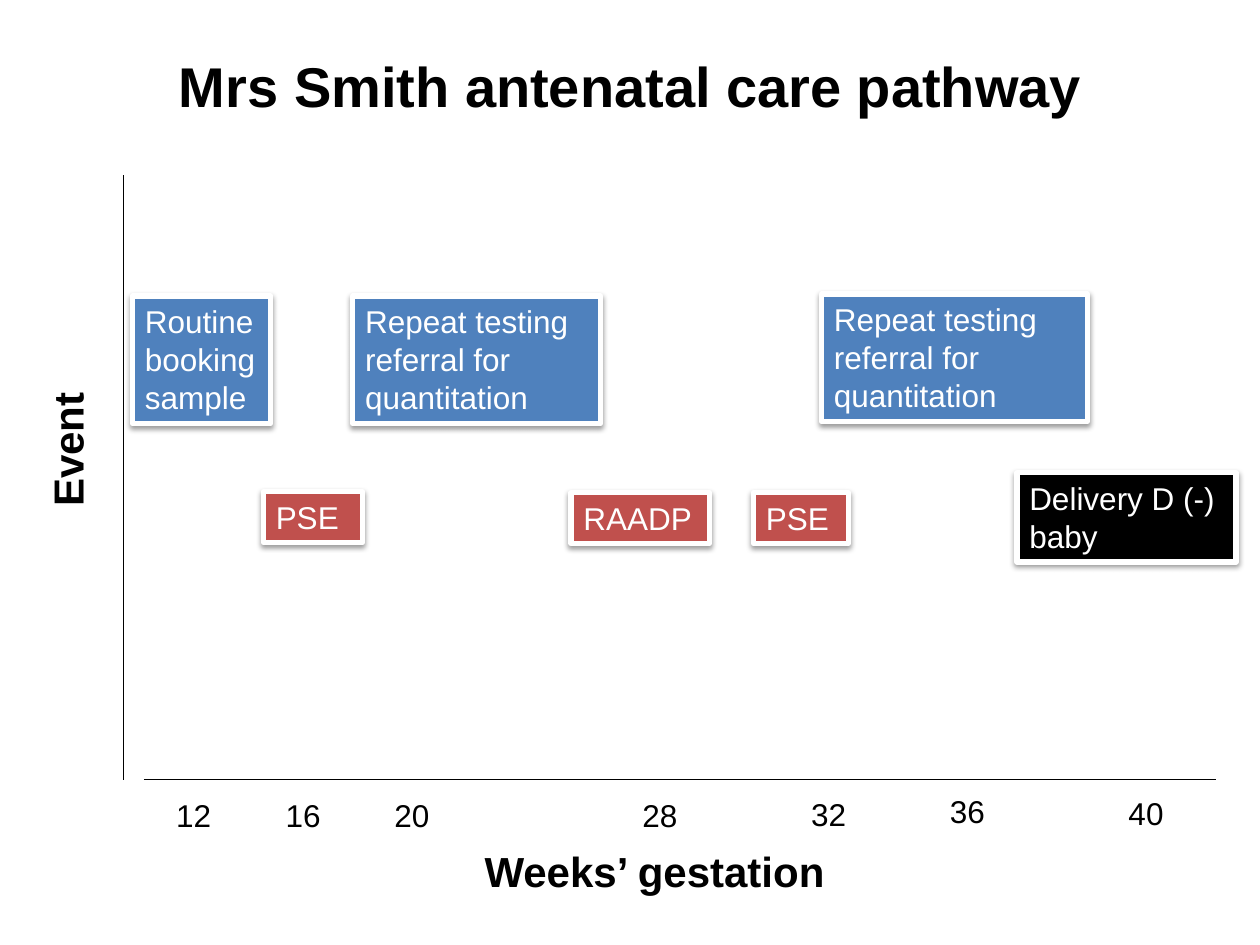
from lxml import etree
from pptx import Presentation
from pptx.dml.color import RGBColor
from pptx.enum.shapes import MSO_CONNECTOR, MSO_SHAPE
from pptx.enum.text import MSO_ANCHOR, MSO_AUTO_SIZE, PP_ALIGN
from pptx.oxml.ns import qn
from pptx.util import Cm, Pt

STRAIGHT = MSO_CONNECTOR.STRAIGHT
RECTANGLE = MSO_SHAPE.RECTANGLE
TOP = MSO_ANCHOR.TOP
GROW = MSO_AUTO_SIZE.SHAPE_TO_FIT_TEXT
LEFT, CENTER = PP_ALIGN.LEFT, PP_ALIGN.CENTER

BLACK = RGBColor(0x00, 0x00, 0x00)
WHITE = RGBColor(0xFF, 0xFF, 0xFF)
BLUE = RGBColor(0x4F, 0x81, 0xBD)
RED = RGBColor(0xC0, 0x50, 0x4D)
FONT = "Arial"

TITLE = "Mrs Smith antenatal care pathway"
TITLE_PLACE = (2.11, 0.91, 21.21, 1.63)
AXIS_TITLES = [
    ("Weeks’ gestation", (9.5, 16.92, 7.39, 1.27), CENTER, 0),
    ("Event", (-0.15, 8.33, 3, 1.27), LEFT, 270),
]
AXES = [(2.9, 15.72, 24.51, 15.72), (2.49, 15.72, 2.49, 3.53)]
WEEKS = [
    ("12", 3.3, 15.93),
    ("16", 5.51, 15.93),
    ("20", 7.7, 15.93),
    ("28", 12.7, 15.93),
    ("32", 16.1, 15.9),
    ("36", 18.9, 15.85),
    ("40", 22.5, 15.88),
]
WEEK_SIZE = (2, 1.03)
REPEAT = "Repeat testing referral for quantitation"
EVENTS = [
    ("Routine booking sample", BLUE, (2.67, 5.97, 2.79, 2.57)),
    ("PSE", RED, (5.31, 9.91, 2, 1.03)),
    (REPEAT, BLUE, (7.11, 5.97, 5, 2.57)),
    ("RAADP", RED, (11.51, 9.93, 2.79, 1.03)),
    ("PSE", RED, (15.19, 9.93, 1.91, 1.03)),
    (REPEAT, BLUE, (16.56, 5.93, 5.36, 2.57)),
    ("Delivery D (-) baby", BLACK, (20.5, 9.53, 4.42, 1.8)),
]


def write(shape, text, size=18, color=BLACK, bold=False, align=LEFT):
    frame = shape.text_frame
    frame.word_wrap = True
    frame.auto_size = GROW
    frame.vertical_anchor = TOP
    para = frame.paragraphs[0]
    para.alignment = align
    span = para.add_run()
    span.text = text
    span.font.name = FONT
    span.font.size = Pt(size)
    span.font.bold = bold
    span.font.color.rgb = color


def lengths(place):
    return [Cm(value) for value in place]


def add_axis(page, ends):
    axis = page.shapes.add_connector(STRAIGHT, *lengths(ends))
    axis.line.color.rgb = BLACK
    axis.line.width = Pt(0.75)
    etree.SubElement(axis._element.spPr, qn("a:effectLst"))


def add_shadow(box):
    box.shadow.inherit = False
    effects = box._element.spPr.find(qn("a:effectLst"))
    shadow = etree.SubElement(
        effects, qn("a:outerShdw"), blurRad=str(Pt(3.1)), dist=str(Pt(1.6)),
        dir="5400000", rotWithShape="0")
    tint = etree.SubElement(shadow, qn("a:srgbClr"), val=str(BLACK))
    etree.SubElement(tint, qn("a:alpha"), val="38000")


def add_event(page, text, fill, place):
    box = page.shapes.add_shape(RECTANGLE, *lengths(place))
    box.fill.solid()
    box.fill.fore_color.rgb = fill
    box.line.color.rgb = WHITE
    box.line.width = Pt(3)
    add_shadow(box)
    write(box, text, color=WHITE)


def main():
    deck = Presentation()
    deck.slide_width, deck.slide_height = Cm(25.4), Cm(19.05)
    page = deck.slides.add_slide(deck.slide_layouts[5])

    title = page.shapes.title
    title.left, title.top, title.width, title.height = lengths(TITLE_PLACE)
    write(title, TITLE, size=32, bold=True, align=CENTER)

    for ends in AXES:
        add_axis(page, ends)
    for text, place, align, turn in AXIS_TITLES:
        box = page.shapes.add_textbox(*lengths(place))
        box.rotation = turn
        write(box, text, size=24, bold=True, align=align)
    for week, left, top in WEEKS:
        box = page.shapes.add_textbox(*lengths((left, top, *WEEK_SIZE)))
        write(box, week)
    for text, fill, place in EVENTS:
        add_event(page, text, fill, place)

    deck.save("out.pptx")


if __name__ == "__main__":
    main()
